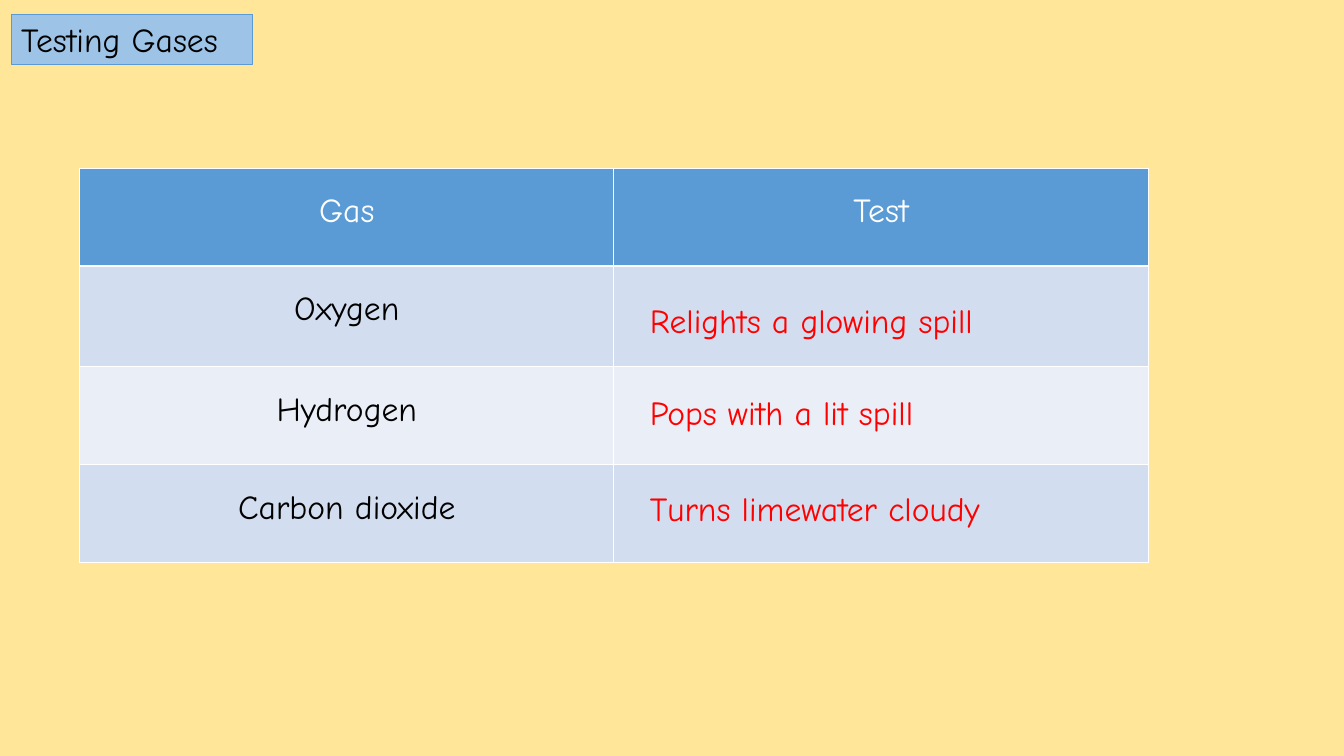
from dataclasses import dataclass

from lxml.etree import SubElement
from pptx import Presentation
from pptx.dml.color import RGBColor
from pptx.enum.text import MSO_ANCHOR, PP_ALIGN
from pptx.oxml.ns import qn
from pptx.slide import Slide
from pptx.table import _Cell
from pptx.text.text import TextFrame
from pptx.util import Pt

FONT = "Comic Neue"
COLOURS = {
    "page": "FFE699",
    "title": "9DC3E6",
    "header": "5B9BD5",
    "odd": "D2DEEF",
    "even": "EAEFF7",
    "white": "FFFFFF",
    "black": "000000",
    "answer": "FF0000",
}
COLUMN_WIDTH = 381.6
ANSWER_LEFT = 457.2
LINE_HEIGHT = 36


@dataclass
class Row:
    labels: tuple[str, ...]
    height: float
    fill: str
    ink: str = "black"


@dataclass
class Answer:
    text: str
    top: float
    width: float


ROWS = (
    Row(("Gas", "Test"), 69.8, "header", "white"),
    Row(("Oxygen",), 72, "odd"),
    Row(("Hydrogen",), 69.8, "even"),
    Row(("Carbon dioxide",), 69.8, "odd"),
)
ANSWERS = (
    Answer("Relights a glowing spill", 211, 266.4),
    Answer("Pops with a lit spill", 276.5, 224.6),
    Answer("Turns limewater cloudy", 344.9, 276.5),
)


def colour(name: str) -> RGBColor:
    """Look up a named colour."""
    return RGBColor.from_string(COLOURS[name])


def write(frame: TextFrame, text: str, ink: str, align: PP_ALIGN, spacing: float = 1.0) -> None:
    """Put one formatted run in the first paragraph."""
    para = frame.paragraphs[0]
    para.alignment = align
    para.line_spacing = spacing
    span = para.add_run()
    span.text = text
    span.font.name = FONT
    span.font.size = Pt(24)
    span.font.bold = False
    span.font.color.rgb = colour(ink)


def set_borders(cell: _Cell) -> None:
    """Give a cell thin white borders on every side."""
    properties = cell._tc.get_or_add_tcPr()
    for side in ("a:lnL", "a:lnR", "a:lnT", "a:lnB"):
        line = SubElement(properties, qn(side), w=str(Pt(1)))
        fill = SubElement(line, qn("a:solidFill"))
        SubElement(fill, qn("a:srgbClr"), val=COLOURS["white"])


def add_title(page: Slide) -> None:
    """Format the title placeholder as a blue label."""
    title = page.shapes.title
    title.left, title.top, title.width, title.height = Pt(7.9), Pt(10.1), Pt(172.8), Pt(LINE_HEIGHT)
    title.fill.solid()
    title.fill.fore_color.rgb = colour("title")
    title.line.color.rgb = colour("header")
    title.line.width = Pt(0.75)
    title.text_frame.vertical_anchor = MSO_ANCHOR.TOP
    title.text_frame.word_wrap = True
    write(title.text_frame, "Testing Gases", "black", PP_ALIGN.LEFT)


def add_gas_table(page: Slide) -> None:
    """Draw the table of gases with an empty test column."""
    height = sum(row.height for row in ROWS)
    table = page.shapes.add_table(
        len(ROWS), 2, Pt(56.9), Pt(120.2), Pt(2 * COLUMN_WIDTH), Pt(height)
    ).table
    table.first_row = table.horz_banding = False
    for index, row in enumerate(ROWS):
        table.rows[index].height = Pt(row.height)
        for cell in table.rows[index].cells:
            set_borders(cell)
            cell.fill.solid()
            cell.fill.fore_color.rgb = colour(row.fill)
            cell.margin_left = cell.margin_right = Pt(9.4)
        for column, label in enumerate(row.labels):
            write(table.cell(index, column).text_frame, label, row.ink, PP_ALIGN.CENTER, 1.5)


def add_answer(page: Slide, answer: Answer) -> None:
    """Place a red answer over the test column."""
    box = page.shapes.add_textbox(
        Pt(ANSWER_LEFT), Pt(answer.top), Pt(answer.width), Pt(LINE_HEIGHT)
    )
    box.text_frame.word_wrap = False
    write(box.text_frame, answer.text, "answer", PP_ALIGN.LEFT)


def main() -> None:
    """Build and save the slide."""
    deck = Presentation()
    deck.slide_width, deck.slide_height = Pt(960), Pt(540)
    page = deck.slides.add_slide(deck.slide_layouts[5])
    page.background.fill.solid()
    page.background.fill.fore_color.rgb = colour("page")
    add_title(page)
    add_gas_table(page)
    for answer in ANSWERS:
        add_answer(page, answer)
    deck.save("out.pptx")


if __name__ == "__main__":
    main()
